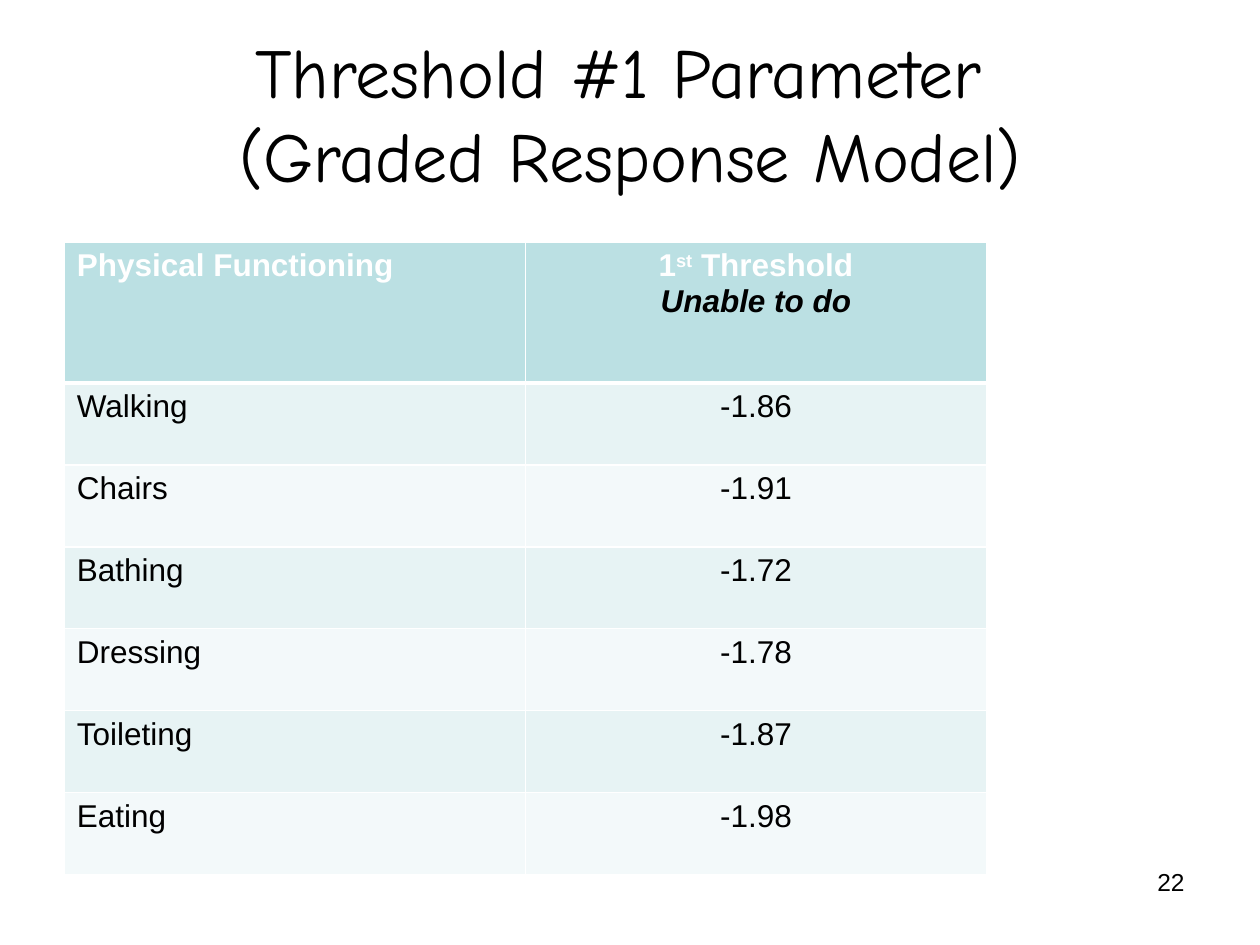
from lxml.etree import SubElement
from pptx import Presentation
from pptx.dml.color import RGBColor
from pptx.enum.text import MSO_ANCHOR, PP_ALIGN
from pptx.oxml.ns import qn
from pptx.util import Inches, Pt

HUES = {
    "ink": "000000",
    "white": "FFFFFF",
    "head": "BBE0E3",
    "odd": "E7F3F4",
    "even": "F3F9FA",
}
ITEMS = [
    ("Walking", "-1.86"),
    ("Chairs", "-1.91"),
    ("Bathing", "-1.72"),
    ("Dressing", "-1.78"),
    ("Toileting", "-1.87"),
    ("Eating", "-1.98"),
]


def color(name):
    return RGBColor.from_string(HUES[name])


def place(shape, left, top, width, height):
    shape.left, shape.top = Inches(left), Inches(top)
    shape.width, shape.height = Inches(width), Inches(height)


def add_run(para, text, size=18, face="Arial", hue="ink", bold=False, slant=False):
    run = para.add_run()
    run.text = text
    font = run.font
    font.size, font.name = Pt(size), face
    font.bold, font.italic = bold, slant
    font.color.rgb = color(hue)
    return run


def add_title(slide):
    title = slide.shapes.title
    place(title, 0, 0.27, 10, 1.25)
    frame = title.text_frame
    frame.vertical_anchor = MSO_ANCHOR.MIDDLE
    para = frame.paragraphs[0]
    para.alignment = PP_ALIGN.CENTER
    add_run(para, "Threshold #1 Parameter ", 40, "Comic Neue")
    para.add_line_break()
    add_run(para, "(Graded Response Model)", 40, "Comic Neue")


def add_edge(cell, side, width):
    props = cell._tc.get_or_add_tcPr()
    line = SubElement(props, qn(f"a:ln{side}"), w=str(Pt(width)))
    fill = SubElement(line, qn("a:solidFill"))
    SubElement(fill, qn("a:srgbClr"), val=HUES["white"])


def style_cell(cell, row, col):
    edges = {"L": 1, "R": 1, "T": 3 if row == 1 else 1, "B": 3 if row == 0 else 1}
    for side, width in edges.items():
        add_edge(cell, side, width)
    cell.fill.solid()
    hue = "head" if row == 0 else "odd" if row % 2 else "even"
    cell.fill.fore_color.rgb = color(hue)
    para = cell.text_frame.paragraphs[0]
    para.alignment = PP_ALIGN.CENTER if col else PP_ALIGN.LEFT
    return para


def fill_head(table):
    para = style_cell(table.cell(0, 0), 0, 0)
    add_run(para, "Physical Functioning", hue="white", bold=True)
    cell = table.cell(0, 1)
    para = style_cell(cell, 0, 1)
    add_run(para, "1", hue="white", bold=True)
    power = add_run(para, "st", hue="white", bold=True)
    power._r.get_or_add_rPr().set("baseline", "30000")
    add_run(para, " Threshold", hue="white", bold=True)
    note = cell.text_frame.add_paragraph()
    note.alignment = PP_ALIGN.CENTER
    add_run(note, "Unable to do", bold=True, slant=True)


def add_grid(slide):
    count = len(ITEMS) + 1
    frame = slide.shapes.add_table(
        count, 2, Inches(0.51), Inches(1.92), Inches(7.32), Inches(5.03)
    )
    table = frame.table
    for col in table.columns:
        col.width = Inches(3.66)
    for index, row in enumerate(table.rows):
        row.height = Inches(0.65 if index else 1.12)
    fill_head(table)
    for row, item in enumerate(ITEMS, 1):
        for col, text in enumerate(item):
            add_run(style_cell(table.cell(row, col), row, col), text)


def add_number(slide):
    box = slide.shapes.add_textbox(
        Inches(7.17), Inches(6.83), Inches(2.33), Inches(0.52)
    )
    box.text_frame.word_wrap = True
    para = box.text_frame.paragraphs[0]
    para.alignment = PP_ALIGN.RIGHT
    add_run(para, "22", 14)


def main():
    deck = Presentation()
    deck.slide_width, deck.slide_height = Inches(10), Inches(7.5)
    slide = deck.slides.add_slide(deck.slide_layouts[5])
    add_title(slide)
    add_grid(slide)
    add_number(slide)
    deck.save("out.pptx")


if __name__ == "__main__":
    main()
